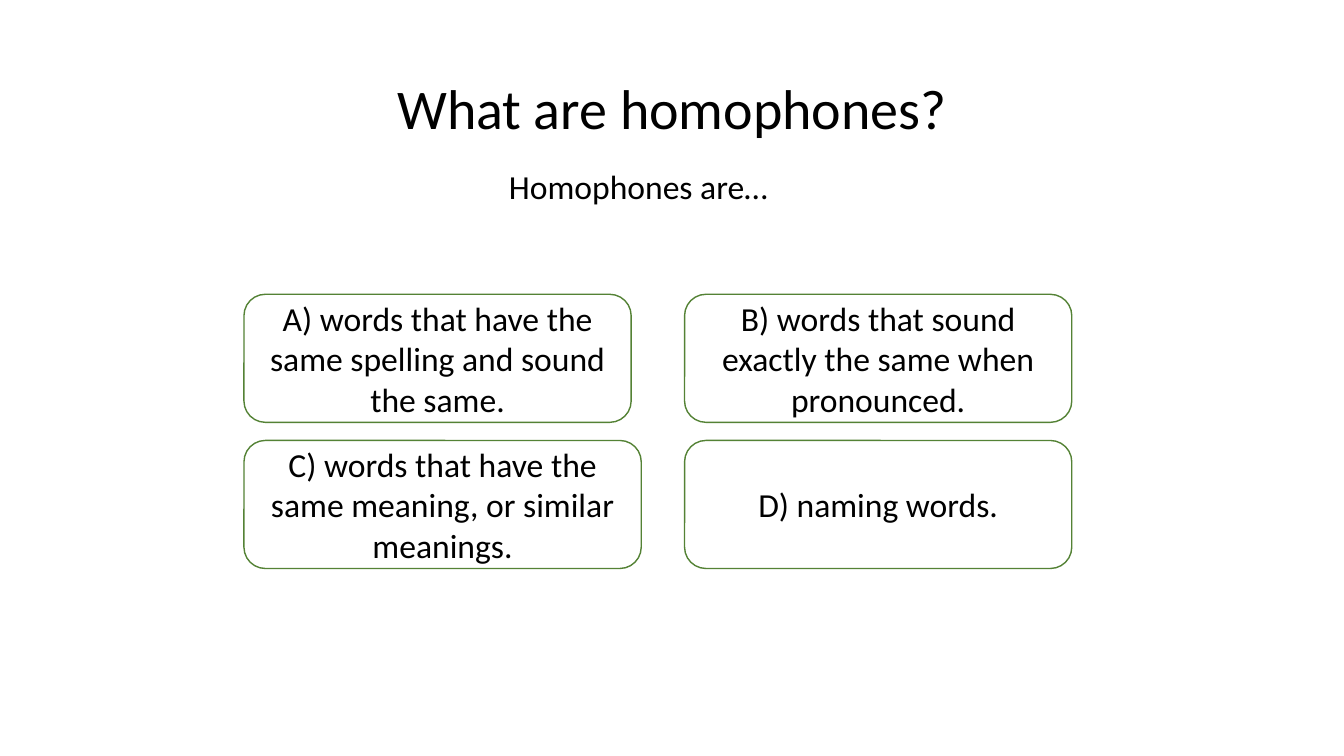
import pptx
import pptx.dml.color
import pptx.enum.shapes
import pptx.enum.text
import pptx.util
from dataclasses import dataclass


@dataclass(frozen=True)
class Theme:
    font: str = "Calibri"
    ink: str = "000000"
    paper: str = "FFFFFF"
    outline: str = "548235"
    outline_width: float = 1
    title_size: int = 40
    body_size: int = 24


@dataclass(frozen=True)
class Grid:
    """Answer grid, in inches."""
    left: float = 2.42
    top: float = 2.92
    column_width: float = 3.84
    row_height: float = 1.27
    column_gap: float = 0.53
    row_gap: float = 0.18

    def cell(self, column, row, extra_width=0):
        return (
            self.left + column * (self.column_width + self.column_gap),
            self.top + row * (self.row_height + self.row_gap),
            self.column_width + extra_width,
            self.row_height,
        )


class QuizPage:
    def __init__(self, deck, theme, grid):
        self.theme = theme
        self.grid = grid
        self.page = deck.slides.add_slide(deck.slide_layouts[6])

    def color(self, value):
        return pptx.dml.color.RGBColor.from_string(value)

    def add_text(self, box, text, size):
        frame = box.text_frame
        frame.word_wrap = True
        para = frame.paragraphs[0]
        para.alignment = pptx.enum.text.PP_ALIGN.CENTER
        span = para.add_run()
        span.text = text
        span.font.name = self.theme.font
        span.font.size = pptx.util.Pt(size)
        span.font.color.rgb = self.color(self.theme.ink)

    def heading(self, text, place, size):
        box = self.page.shapes.add_textbox(*map(pptx.util.Inches, place))
        self.add_text(box, text, size)
        box.text_frame.auto_size = pptx.enum.text.MSO_AUTO_SIZE.SHAPE_TO_FIT_TEXT

    def answer(self, text, column, row, extra_width=0):
        place = self.grid.cell(column, row, extra_width)
        box = self.page.shapes.add_shape(
            pptx.enum.shapes.MSO_SHAPE.ROUNDED_RECTANGLE,
            *map(pptx.util.Inches, place),
        )
        box.shadow.inherit = False
        box.fill.solid()
        box.fill.fore_color.rgb = self.color(self.theme.paper)
        box.line.color.rgb = self.color(self.theme.outline)
        box.line.width = pptx.util.Pt(self.theme.outline_width)
        box.text_frame.vertical_anchor = pptx.enum.text.MSO_ANCHOR.MIDDLE
        self.add_text(box, text, self.theme.body_size)


def main():
    deck = pptx.Presentation()
    deck.slide_width = pptx.util.Inches(13.33)
    deck.slide_height = pptx.util.Inches(7.5)
    theme = Theme()
    quiz = QuizPage(deck, theme, Grid())

    # Title
    quiz.heading("What are homophones?", (2.61, 0.68, 8.11, 0.77), theme.title_size)

    # Answers, row by row; the third is slightly wider
    quiz.answer("A) words that have the same spelling and sound the same.", 0, 0)
    quiz.answer("B) words that sound exactly the same when pronounced.", 1, 0)
    quiz.answer("C) words that have the same meaning, or similar meanings.", 0, 1, 0.1)
    quiz.answer("D) naming words.", 1, 1)

    # Question stem
    quiz.heading("Homophones are…", (1.94, 1.6, 8.78, 0.5), theme.body_size)

    deck.save("out.pptx")


if __name__ == "__main__":
    main()
